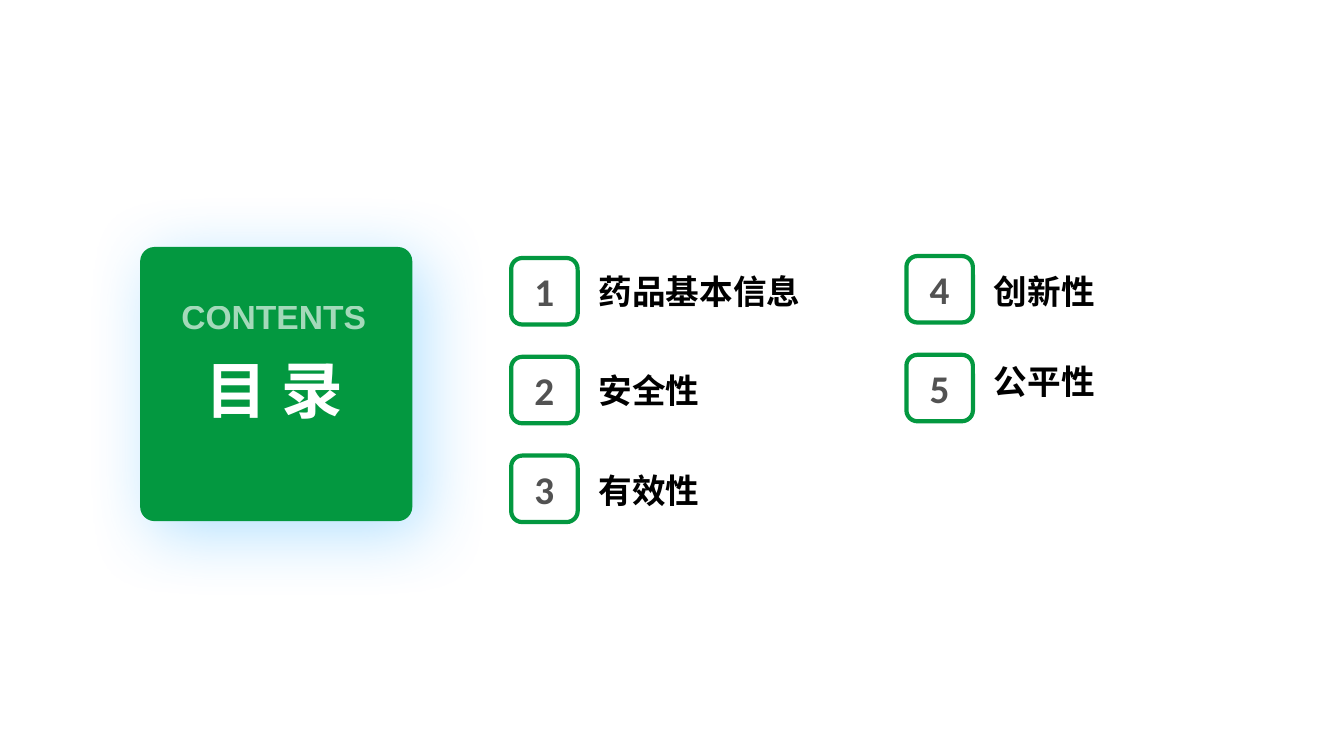
from lxml.etree import SubElement as Sub
from pptx import Presentation
from pptx.dml.color import RGBColor
from pptx.enum.shapes import MSO_SHAPE as Shape
from pptx.enum.text import MSO_ANCHOR as Anchor, MSO_AUTO_SIZE as Fit, PP_ALIGN as Align
from pptx.oxml.ns import qn
from pptx.util import Inches, Pt

GREEN = RGBColor(0x03, 0x98, 0x40)
WHITE = RGBColor(0xFF, 0xFF, 0xFF)
BLACK = RGBColor(0, 0, 0)
GRAY = RGBColor(0x52, 0x52, 0x52)
GLOW = RGBColor(0x41, 0xB4, 0xFF)

TITLE, SUB = "目 录", "CONTENTS"
# Each column: left edge, top of first badge, label tops, labels
COLS = [
    (5.07, 2.56, (2.64, 3.62, 4.61), ("药品基本信息", "安全性", "有效性")),
    (8.99, 2.54, (2.64, 3.53), ("创新性", "公平性")),
]
BADGE, PITCH, GAP = 0.66, 0.98, 0.77
LABEL = (2.33, 0.5)

HEAD = dict(name="Arial", size=Pt(44), bold=True)
BODY = dict(name="Arial", size=Pt(24), bold=True)
DIGIT = dict(name="Calibri", size=Pt(28), bold=True)


def write(shape, text, style, color, align=Align.LEFT, anchor=Anchor.TOP):
    frame = shape.text_frame
    frame.word_wrap = True
    frame.auto_size = Fit.NONE
    frame.vertical_anchor = anchor
    para = frame.paragraphs[0]
    para.alignment = align
    run = para.add_run()
    run.text = text
    for key, value in style.items():
        setattr(run.font, key, value)
    run.font.color.rgb = color
    return run


def fade(parent, percent):
    Sub(parent, qn("a:alpha"), val=str(percent * 1000))


def cast(effects, color, alpha, blur, dist):
    """Put an outer shadow at 45 degrees in an effect list."""
    outer = Sub(effects, qn("a:outerShdw"), blurRad=str(Pt(blur)), dist=str(Pt(dist)),
                dir="2700000", algn="tl", rotWithShape="0")
    fade(Sub(outer, qn("a:srgbClr"), val=str(color)), alpha)


def box(slide, x, y, w, h, fill):
    shape = slide.shapes.add_shape(Shape.ROUNDED_RECTANGLE, *map(Inches, (x, y, w, h)))
    shape.shadow.inherit = False
    shape.fill.solid()
    shape.fill.fore_color.rgb = fill
    return shape


def label(slide, x, y, w, h, *args):
    return write(slide.shapes.add_textbox(*map(Inches, (x, y, w, h))), *args)


def add_card(slide):
    card = box(slide, 1.39, 2.45, 2.7, 2.72, GREEN)
    card.adjustments[0] = 0.053
    card.line.fill.background()
    cast(card._element.spPr.find(qn("a:effectLst")), GLOW, 40, 49, 12)

    title = slide.shapes.title
    title.left, title.top, title.width, title.height = map(Inches, (1.82, 3.44, 1.8, 0.84))
    run = write(title, TITLE, HEAD, WHITE, Align.CENTER)
    props = run.font._element
    effects = Sub(props, qn("a:effectLst"))
    props.find(qn("a:solidFill")).addnext(effects)
    cast(effects, BLACK, 43, 3, 3)
    card._element.addnext(title._element)

    run = label(slide, 1.66, 2.89, 2.11, 0.5, SUB, BODY, WHITE, Align.CENTER)
    fade(run.font._element.find(".//" + qn("a:srgbClr")), 63)


def add_items(slide):
    count = 0
    for x, top, tops, names in COLS:
        for row, (y, name) in enumerate(zip(tops, names)):
            count += 1
            badge = box(slide, x, top + row * PITCH, BADGE, BADGE, WHITE)
            badge.line.color.rgb = GREEN
            badge.line.width = Pt(3)
            write(badge, str(count), DIGIT, GRAY, Align.CENTER, Anchor.MIDDLE)
            label(slide, x + GAP, y, *LABEL, name, BODY, BLACK)


def main():
    deck = Presentation()
    deck.slide_width, deck.slide_height = Inches(13.33), Inches(7.5)
    slide = deck.slides.add_slide(deck.slide_layouts[5])
    add_card(slide)
    add_items(slide)
    deck.save("out.pptx")


if __name__ == "__main__":
    main()
